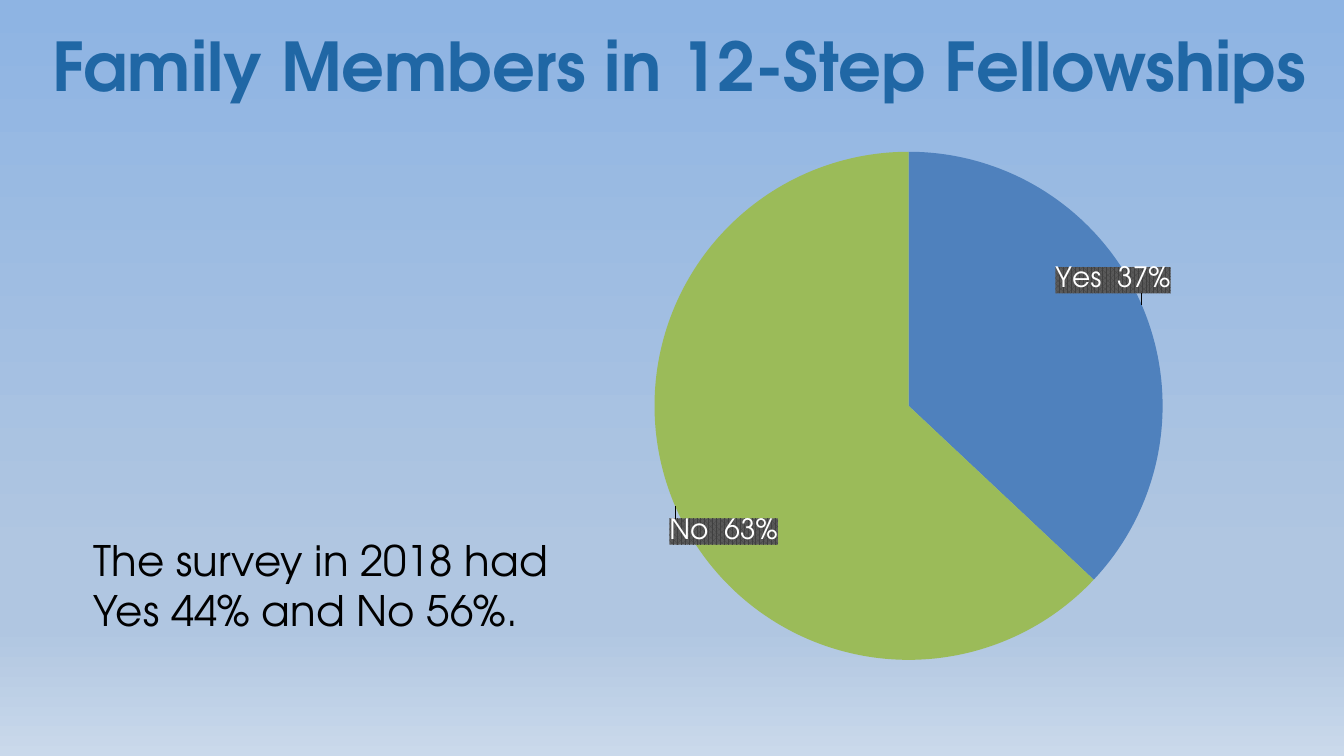
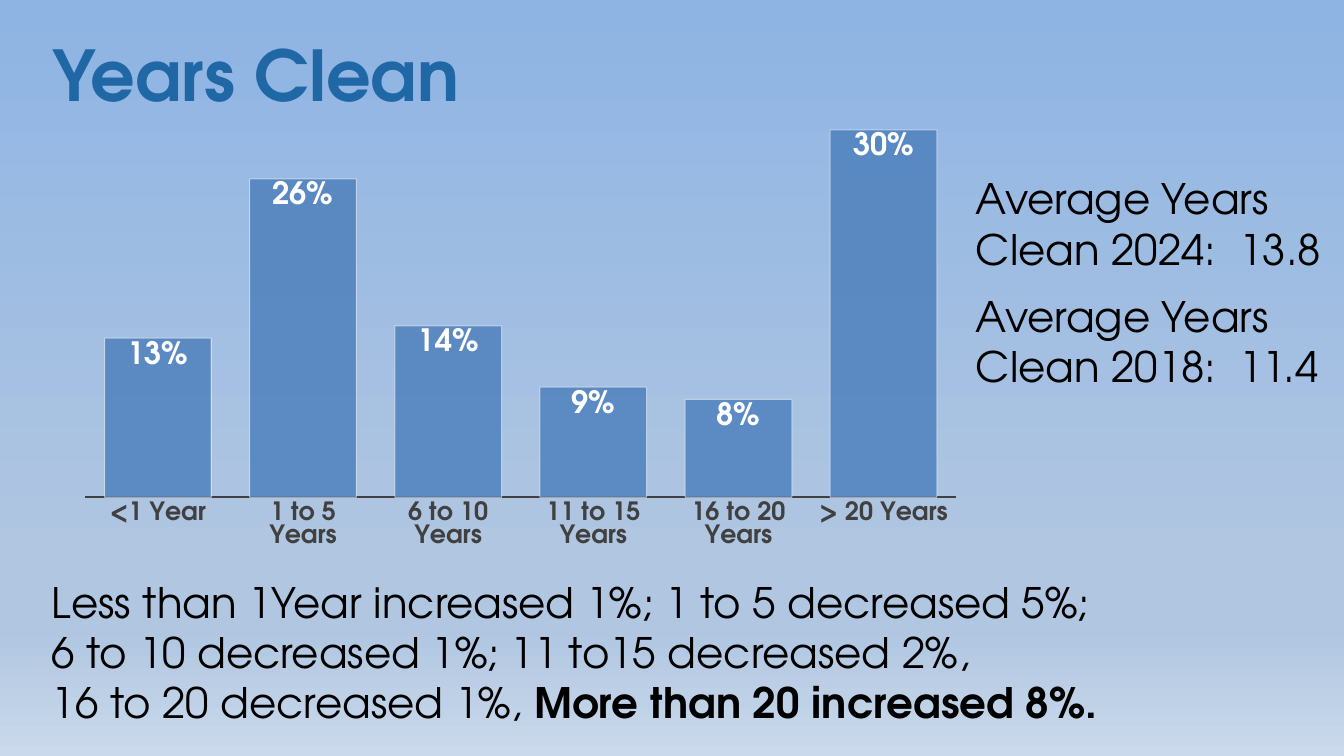
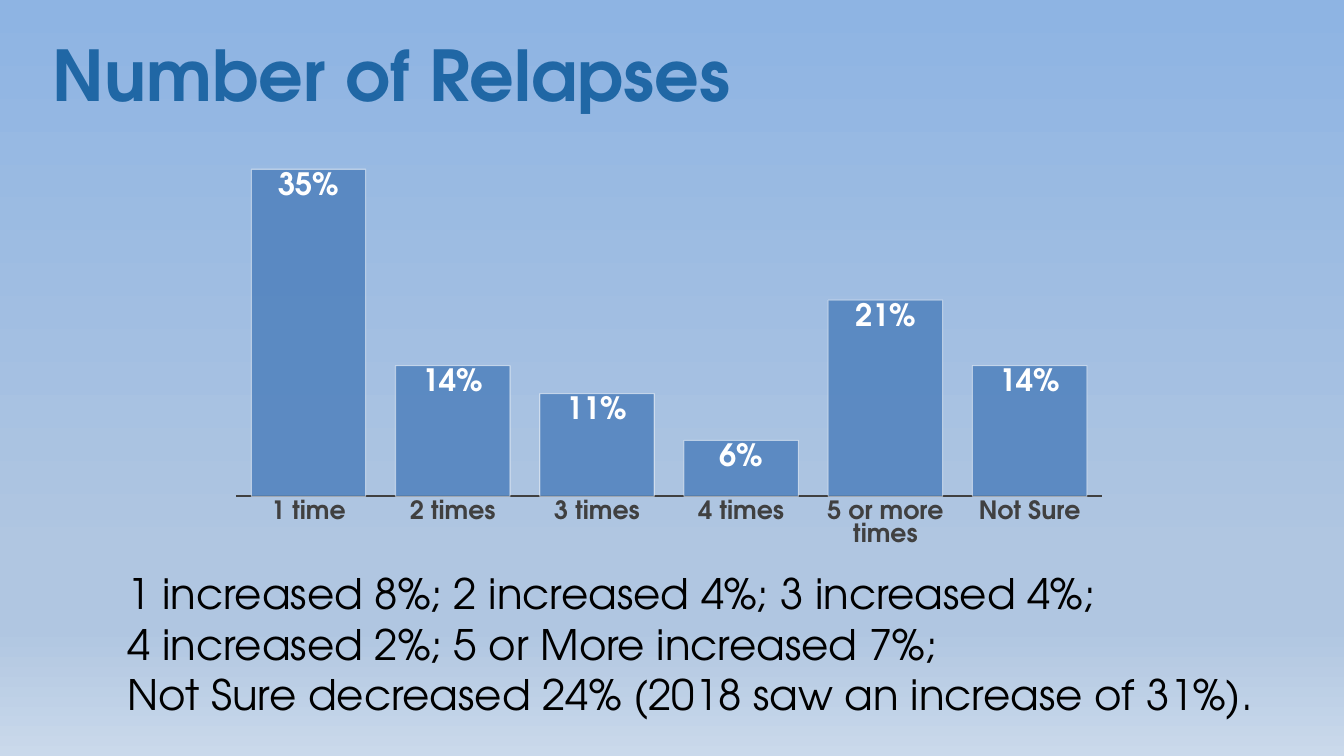
"""Build three survey slides: family members, years clean and relapses."""
import copy
import dataclasses

import lxml.etree
import pptx
import pptx.chart.data
import pptx.dml.color
import pptx.enum.chart
import pptx.enum.text
import pptx.oxml
import pptx.oxml.ns
import pptx.util

Pt = pptx.util.Pt
qn = pptx.oxml.ns.qn


@dataclasses.dataclass(frozen=True)
class Theme:
    font: str = "TeX Gyre Adventor"
    chart_font: str = "Calibri"
    title: str = "2067A5"
    ink: str = "000000"
    axis: str = "404040"
    label: str = "FFFFFF"
    label_back: tuple = ("404040", "595959")
    blue: str = "4F81BD"
    green: str = "9BBB59"
    sky: tuple = ((0, "8EB4E3"), (74, "B0C6E1"), (83, "B0C6E1"), (100, "CAD9EB"))
    title_size: int = 50
    long_title_size: int = 48
    body_size: int = 30
    value_size: int = 22
    pie_label_size: int = 20
    axis_size: int = 18
    chart_size: int = 10


THEME = Theme()


def rgb(value):
    return pptx.dml.color.RGBColor.from_string(value)


def style_font(font, size, color, bold=False, name=THEME.font):
    font.name = name
    font.size = Pt(size)
    font.bold = bold
    font.color.rgb = rgb(color)


def paint_sky(master):
    fill = master.background.fill
    fill.gradient()
    fill.gradient_angle = 270
    stops = fill.gradient_stops._gsLst
    for stop in list(stops):
        stops.remove(stop)
    for percent, color in THEME.sky:
        stop = lxml.etree.SubElement(stops, qn("a:gs"), pos=str(percent * 1000))
        lxml.etree.SubElement(stop, qn("a:srgbClr"), val=color)


def place(part, box):
    part.left, part.top, part.width, part.height = map(Pt, box)


def add_slide(deck, title, box, size=THEME.title_size, centred=False):
    slide = deck.slides.add_slide(deck.slide_layouts[5])
    heading = slide.shapes.title
    place(heading, box)
    frame = heading.text_frame
    frame.word_wrap = True
    frame.auto_size = pptx.enum.text.MSO_AUTO_SIZE.NONE
    anchors = pptx.enum.text.MSO_ANCHOR
    frame.vertical_anchor = anchors.MIDDLE if centred else anchors.TOP
    paragraph = frame.paragraphs[0]
    paragraph.alignment = pptx.enum.text.PP_ALIGN.LEFT
    if not centred:
        frame.margin_top = 0
        paragraph.line_spacing = 1.07
    run = paragraph.add_run()
    run.text = title
    style_font(run.font, size, THEME.title, bold=True)
    return slide


def add_run(paragraph, text, bold=False):
    run = paragraph.add_run()
    run.text = text
    style_font(run.font, THEME.body_size, THEME.ink, bold)


def add_note(slide, box, paragraphs, gap=0, emphasis="", wrap=True):
    frame = slide.shapes.add_textbox(*map(Pt, box)).text_frame
    frame.word_wrap = wrap
    for index, lines in enumerate(paragraphs):
        paragraph = frame.add_paragraph() if index else frame.paragraphs[0]
        if index:
            paragraph.space_before = Pt(gap)
        for number, line in enumerate(lines):
            if number:
                paragraph.add_line_break()
            add_run(paragraph, line)
    if emphasis:
        add_run(paragraph, emphasis, bold=True)


def layout_xml(**fractions):
    layout = pptx.oxml.parse_xml(
        f'<c:layout {pptx.oxml.ns.nsdecls("c")}><c:manualLayout/></c:layout>')
    for name, value in fractions.items():
        lxml.etree.SubElement(layout[0], qn(f"c:{name}"), val=str(value))
    return layout


def add_chart(slide, kind, box, shares, number_format, plot_area):
    survey = pptx.chart.data.CategoryChartData(number_format=number_format)
    survey.categories = list(shares)
    survey.add_series("Series 1", list(shares.values()))
    chart = slide.shapes.add_chart(kind, *map(Pt, box), survey).chart
    chart.has_title = False
    chart.has_legend = False
    style_font(chart.font, THEME.chart_size, THEME.ink, name=THEME.chart_font)
    area = chart._chartSpace.chart.plotArea
    for layout in area.findall(qn("c:layout")):
        area.remove(layout)
    x, y, w, h = plot_area
    area.insert(0, layout_xml(layoutTarget="inner", xMode="edge", yMode="edge",
                              x=x, y=y, w=w, h=h))
    return chart


def add_pie(slide, box, shares, plot_area, colors, label_shifts):
    chart = add_chart(slide, pptx.enum.chart.XL_CHART_TYPE.PIE, box, shares,
                      "General", plot_area)
    plot = chart.plots[0]
    plot.vary_by_categories = True
    series = plot.series[0]
    for index, color in enumerate(colors):
        slice_fill = series.points[index].format.fill
        slice_fill.solid()
        slice_fill.fore_color.rgb = rgb(color)
    labels = series.data_labels
    labels.show_value = False
    labels.show_category_name = True
    labels.position = pptx.enum.chart.XL_LABEL_POSITION.CENTER
    style_font(labels.font, THEME.pie_label_size, THEME.label)
    shift_labels(labels._element, label_shifts)


def shift_labels(labels, shifts):
    front, back = THEME.label_back
    labels.find(qn("c:txPr")).addprevious(pptx.oxml.parse_xml(
        f'<c:spPr {pptx.oxml.ns.nsdecls("c", "a")}><a:pattFill prst="pct75">'
        f'<a:fgClr><a:srgbClr val="{front}"/></a:fgClr>'
        f'<a:bgClr><a:srgbClr val="{back}"/></a:bgClr></a:pattFill></c:spPr>'))
    shared = [part for part in labels if part.tag != qn("c:showLeaderLines")]
    for index, (x, y) in enumerate(shifts):
        label = pptx.oxml.parse_xml(
            f'<c:dLbl {pptx.oxml.ns.nsdecls("c")}><c:idx val="{index}"/></c:dLbl>')
        label.append(layout_xml(x=x, y=y))
        label.extend(copy.deepcopy(shared))
        labels.insert(index, label)


def add_columns(slide, box, shares, plot_area, gap, top):
    chart = add_chart(slide, pptx.enum.chart.XL_CHART_TYPE.COLUMN_CLUSTERED, box,
                      shares, "0%", plot_area)
    scale = chart.value_axis
    scale.visible = False
    scale.has_major_gridlines = False
    scale.minimum_scale, scale.maximum_scale = 0, top
    axis = chart.category_axis
    axis.major_tick_mark = pptx.enum.chart.XL_TICK_MARK.NONE
    axis.format.line.color.rgb = rgb(THEME.axis)
    axis.format.line.width = Pt(1.5)
    style_font(axis.tick_labels.font, THEME.axis_size, THEME.axis, bold=True)
    plot = chart.plots[0]
    plot.gap_width = gap
    plot.vary_by_categories = False
    series = plot.series[0]
    series.format.fill.solid()
    series.format.fill.fore_color.rgb = rgb(THEME.blue)
    series.format.line.color.rgb = rgb(THEME.label)
    series.format.line.width = Pt(0.75)
    for color, opacity in zip(series._element.xpath("c:spPr//a:srgbClr"), (85, 50)):
        lxml.etree.SubElement(color, qn("a:alpha"), val=str(opacity * 1000))
    labels = series.data_labels
    labels.show_value = True
    labels.number_format = "0%"
    labels.number_format_is_linked = False
    labels.position = pptx.enum.chart.XL_LABEL_POSITION.INSIDE_END
    style_font(labels.font, THEME.value_size, THEME.label, bold=True)


def add_family(deck):
    slide = add_slide(deck, "Family Members in 12-Step Fellowships", (30, 1, 924, 90),
                      THEME.long_title_size, centred=True)
    add_pie(slide, (300, 96, 698, 384), {"Yes  37%": 37, "No  63%": 63},
            (0.24, 0.03, 0.52, 0.95), (THEME.blue, THEME.green),
            ((0.09, -0.14), (-0.07, 0.14)))
    add_note(slide, (60, 378, 342, 80),
             [["The survey in 2018 had", "Yes 44% and No 56%."]], wrap=False)


def add_years_clean(deck):
    slide = add_slide(deck, "Years Clean", (30, 18, 864, 90))
    shares = {"<1 Year": 0.13, "1 to 5 Years": 0.26, "6 to 10 Years": 0.14,
              "11 to 15 Years": 0.09, "16 to 20 Years": 0.08, "> 20 Years": 0.3}
    add_columns(slide, (48, 42, 648, 356), shares, (0.02, 0.02, 0.96, 0.86), 36, 0.35)
    add_note(slide, (30, 408, 912, 117),
             [["Less than 1Year increased 1%; 1 to 5 decreased 5%;",
               "6 to 10 decreased 1%; 11 to15 decreased 2%,",
               "16 to 20 decreased 1%, "]],
             emphasis="More than 20 increased 8%.")
    add_note(slide, (690, 120, 288, 165),
             [["Average Years Clean 2024:  13.8"], ["Average Years Clean 2018:  11.4"]],
             gap=12)


def add_relapses(deck):
    slide = add_slide(deck, "Number of Relapses", (30, 18, 906, 90))
    shares = {"1 time": 0.35, "2 times": 0.14, "3 times": 0.11,
              "4 times": 0.06, "5 or more times": 0.21, "Not Sure": 0.14}
    add_columns(slide, (156, 78, 644, 318), shares, (0.02, 0.03, 0.96, 0.84), 26, 0.4)
    add_note(slide, (84, 402, 870, 117),
             [["1 increased 8%; 2 increased 4%; 3 increased 4%;",
               "4 increased 2%; 5 or More increased 7%;"],
              ["Not Sure decreased 24% (2018 saw an increase of 31%)."]])


def main():
    deck = pptx.Presentation()
    deck.slide_width, deck.slide_height = Pt(960), Pt(540)
    paint_sky(deck.slide_master)
    add_family(deck)
    add_years_clean(deck)
    add_relapses(deck)
    deck.save("out.pptx")


if __name__ == "__main__":
    main()
